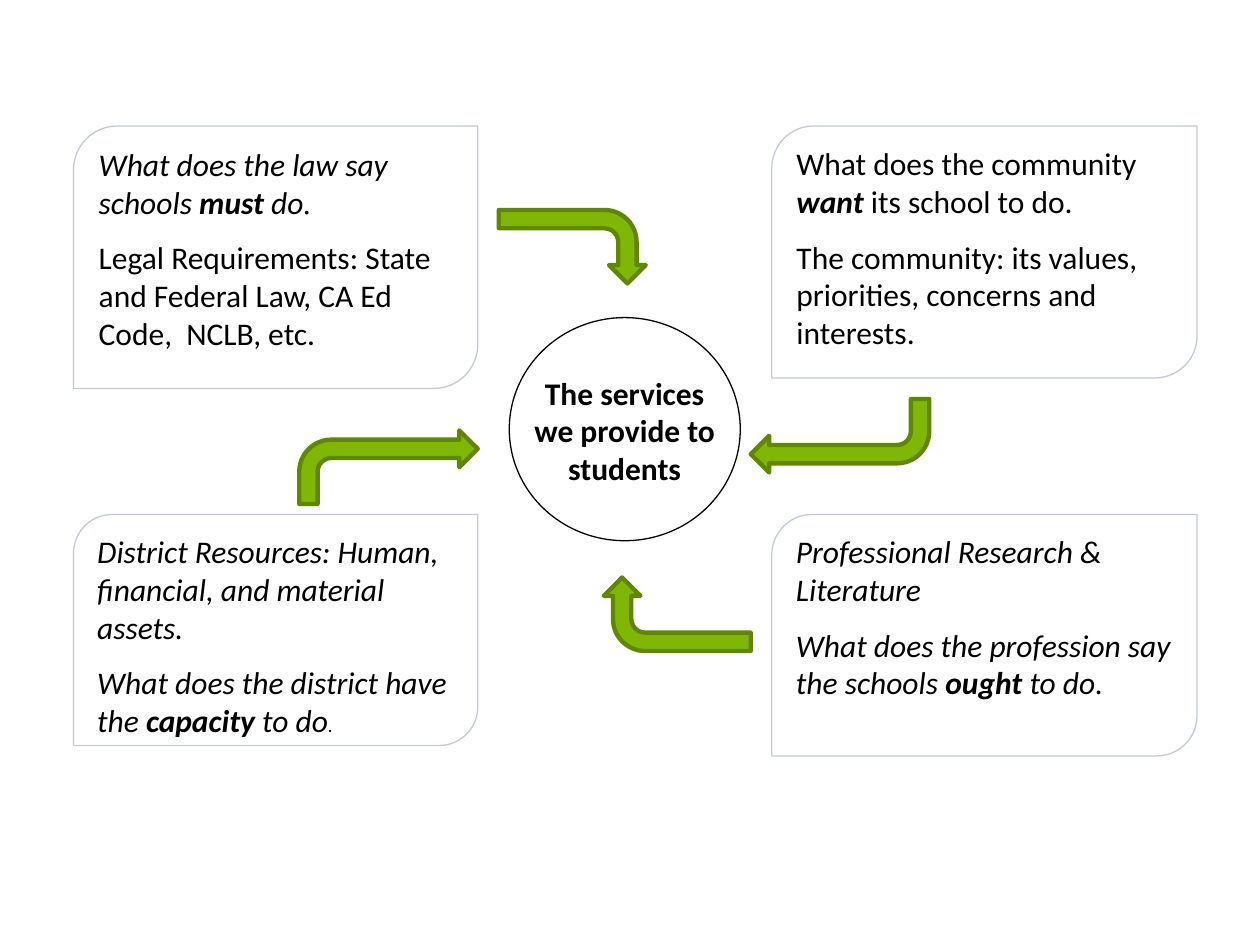
from lxml import etree
from pptx import Presentation
from pptx.dml.color import RGBColor
from pptx.enum.shapes import MSO_SHAPE
from pptx.enum.text import MSO_ANCHOR, PP_ALIGN
from pptx.oxml.ns import qn
from pptx.util import Inches, Pt

CARD, ARROW, CIRCLE = MSO_SHAPE.ROUND_2_DIAG_RECTANGLE, MSO_SHAPE.BENT_ARROW, MSO_SHAPE.OVAL
LEFT, CENTER, TOP = PP_ALIGN.LEFT, PP_ALIGN.CENTER, MSO_ANCHOR.TOP

THEME = {
    "white": "FFFFFF", "ink": "000000", "card_line": "8797AC",
    "arrow": "80B606", "arrow_line": "5F8704",
    "font": "Calibri", "serif": "Times New Roman",
    "body": 18, "small": 11, "space_after": 10,
    "thin": 0.75, "thick": 2.5, "card_line_alpha": 50,
}
COLS, ROWS = 120, 90
WIDTH, HEIGHT = Inches(10), Inches(7.5)

ITALIC = {"italic": True}
STRONG = {"italic": True, "bold": True}

CARDS = [
    ((73.5, 12, 40.5, 24), [
        [("What does the community ", {}), ("want", STRONG), (" its school to do.", {})],
        [("The community: its values, priorities, concerns and interests.", {})],
    ]),
    ((7, 12, 38.5, 25), [
        [("What does the law say schools ", ITALIC), ("must", STRONG), (" do", ITALIC),
         (".", {"italic": True, "name": THEME["serif"]})],
        [("Legal Requirements: State and Federal Law, CA Ed Code,  NCLB, etc.", {})],
    ]),
    ((73.5, 49, 40.5, 23), [
        [("Professional Research & Literature", ITALIC)],
        [("What does the profession say the schools ", ITALIC), ("ought", STRONG),
         (" to do.", ITALIC)],
    ]),
    ((7, 49, 38.5, 22), [
        [("District Resources: Human, financial, and material assets.", ITALIC)],
        [("What does the district have the ", ITALIC), ("capacity", STRONG),
         (" to do", ITALIC), (".", {"italic": True, "size": Pt(THEME["small"])})],
    ]),
]
ARROWS = [
    ((28.5, 41, 17, 7), 0),
    ((51, 16.5, 7, 14), 90),
    ((61, 51.5, 7, 14), 270),
    ((71.5, 38, 17, 7), 180),
]
HUB = (48.5, 30.25, 22, 21.25)


def place(box):
    x, y, w, h = box
    return (round(WIDTH * x / COLS), round(HEIGHT * y / ROWS),
            round(WIDTH * w / COLS), round(HEIGHT * h / ROWS))


def color(name):
    return RGBColor.from_string(THEME[name])


def add_shape(s, kind, box, fill, line, weight):
    sp = s.shapes.add_shape(kind, *place(box))
    sp.shadow.inherit = False
    sp.fill.solid()
    sp.fill.fore_color.rgb = color(fill)
    sp.line.color.rgb = color(line)
    sp.line.width = Pt(THEME[weight])
    return sp


def write(sp, paragraphs, align):
    tf = sp.text_frame
    tf.word_wrap = True
    tf.vertical_anchor = TOP
    for i, runs in enumerate(paragraphs):
        p = tf.add_paragraph() if i else tf.paragraphs[0]
        p.alignment = align
        p.space_after = Pt(THEME["space_after"])
        for text, extra in runs:
            r = p.add_run()
            r.text = text
            style = {"name": THEME["font"], "size": Pt(THEME["body"]), **extra}
            for key, value in style.items():
                setattr(r.font, key, value)
            r.font.color.rgb = color("ink")


def add_hub(s, box):
    add_shape(s, CIRCLE, box, "white", "ink", "thin")
    x, y, w, h = box
    label = s.shapes.add_textbox(*place((x + 0.55, y + 4.75, w - 1.1, 12)))
    write(label, [[("The services we provide to students", {"bold": True})]], CENTER)


def add_card(s, box, paragraphs):
    sp = add_shape(s, CARD, box, "white", "card_line", "thin")
    line_color = sp.line._get_or_add_ln().find(".//" + qn("a:srgbClr"))
    alpha = etree.SubElement(line_color, qn("a:alpha"))
    alpha.set("val", str(THEME["card_line_alpha"] * 1000))
    write(sp, paragraphs, LEFT)


def add_arrow(s, box, rotation):
    sp = add_shape(s, ARROW, box, "arrow", "arrow_line", "thick")
    sp.rotation = rotation


def main():
    prs = Presentation()
    prs.slide_width, prs.slide_height = WIDTH, HEIGHT
    s = prs.slides.add_slide(prs.slide_layouts[6])
    add_hub(s, HUB)
    for box, paragraphs in CARDS:
        add_card(s, box, paragraphs)
    for box, rotation in ARROWS:
        add_arrow(s, box, rotation)
    prs.save("out.pptx")


if __name__ == "__main__":
    main()
